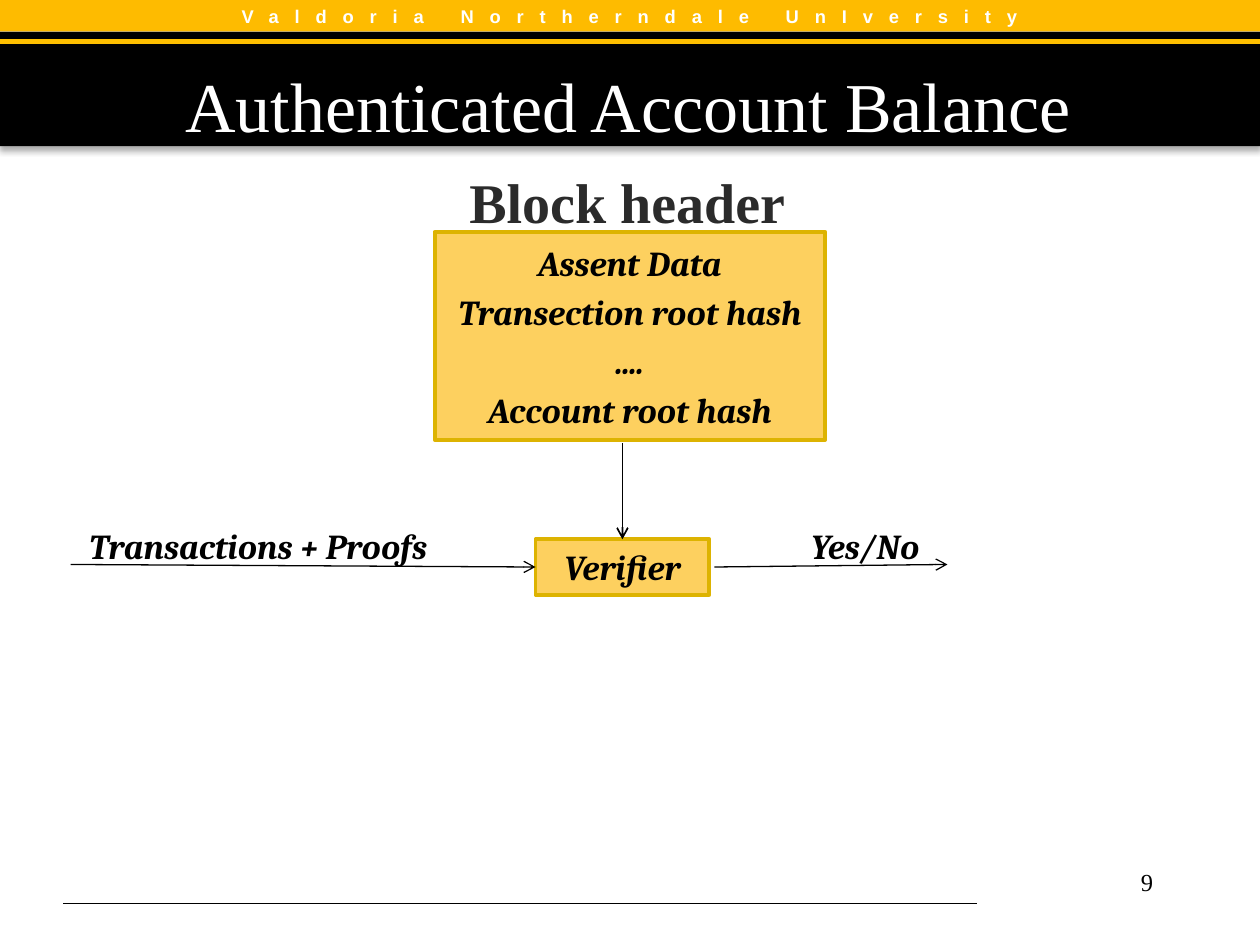
import pptx
import pptx.util
import pptx.dml.color
import pptx.enum.shapes
import pptx.enum.text
import pptx.oxml
import pptx.oxml.ns
import lxml.etree
from pptx.util import Inches, Pt

COLORS = {"black": "000000", "white": "FFFFFF", "gold": "FEBB00", "stripe": "FFC000",
          "heading": "2B2B2B", "box": "FDD05F", "border": "DDB301"}
RECTANGLE = pptx.enum.shapes.MSO_SHAPE.RECTANGLE
ALIGN = pptx.enum.text.PP_ALIGN
ANCHOR = pptx.enum.text.MSO_ANCHOR
rgb = {name: pptx.dml.color.RGBColor.from_string(value) for name, value in COLORS.items()}
qn = pptx.oxml.ns.qn

deck = pptx.Presentation()
deck.slide_width, deck.slide_height = Inches(10), Inches(7.5)
slide = deck.slides.add_slide(deck.slide_layouts[5])


def write(shape, lines, font, size, color, bold=False, italic=False,
          align=ALIGN.CENTER, anchor=ANCHOR.MIDDLE, gap=0):
    """Fill a shape with one run per line; gap is the space between lines."""
    frame = shape.text_frame
    frame.word_wrap = True
    frame.auto_size = pptx.enum.text.MSO_AUTO_SIZE.NONE
    frame.vertical_anchor = anchor
    for index, line in enumerate(lines):
        paragraph = frame.add_paragraph() if index else frame.paragraphs[0]
        paragraph.alignment = align
        paragraph.space_before = Pt(gap if index else 0)
        run = paragraph.add_run()
        run.text = line
        run.font.name, run.font.size = font, Pt(size)
        run.font.bold, run.font.italic = bold, italic
        run.font.color.rgb = rgb[color]


def draw_line(start, end, color, width, arrow=False):
    line = slide.shapes.add_connector(pptx.enum.shapes.MSO_CONNECTOR.STRAIGHT,
                                      *map(Inches, start + end))
    line.line.color.rgb = rgb[color]
    line.line.width = Pt(width)
    if arrow:
        lxml.etree.SubElement(line.line._get_or_add_ln(), qn("a:tailEnd"), type="arrow")
    lxml.etree.SubElement(line._element.spPr, qn("a:effectLst"))
    return line


# Title on black
title = slide.shapes.title
title.left, title.top, title.width, title.height = map(Inches, (0, 0.25, 9.97, 0.83))
title.left, title.width = Inches(0), Inches(10)
title.fill.solid()
title.fill.fore_color.rgb = rgb["black"]
write(title, ["Authenticated Account Balance"], "Times New Roman", 40, "white")
title.text_frame.margin_right = Inches(0.13)
title.text_frame.paragraphs[0].line_spacing = 1.5

# Header bands and diagram boxes: place, fill, border
rectangles = []
for place, fill, border in [
    ((0, 0, 10, 0.25), "gold", None),
    ((0, 1.08, 10, 0.08), "black", None),
    ((3.45, 1.84, 3.1, 1.65), "box", "border"),
    ((4.25, 4.28, 1.38, 0.44), "box", "border"),
]:
    rectangle = slide.shapes.add_shape(RECTANGLE, *map(Inches, place))
    rectangle.shadow.inherit = False
    rectangle.fill.solid()
    rectangle.fill.fore_color.rgb = rgb[fill]
    if border:
        rectangle.line.color.rgb = rgb[border]
        rectangle.line.width = Pt(2.25)
    else:
        rectangle.line.fill.background()
    rectangles.append(rectangle)
university, title_edge, block_header, verifier = rectangles

# University name, letter-spaced
write(university, ["Valdoria Northerndale UnIversity"], "Arial", 10.5, "white", bold=True)
university.text_frame.paragraphs[0].runs[0].font._element.set("spc", "910")
draw_line((0, 0.33), (10, 0.33), "stripe", 3)

# Soft shadow under the title
title_edge._element.spPr.find(qn("a:effectLst")).append(pptx.oxml.parse_xml(
    '<a:outerShdw xmlns:a="http://schemas.openxmlformats.org/drawingml/2006/main"'
    f' blurRad="{Pt(3.5)}" dist="{Pt(2.2)}" dir="5400000" rotWithShape="0">'
    f'<a:srgbClr val="{COLORS["black"]}"><a:alpha val="32000"/></a:srgbClr></a:outerShdw>'))

# Diagram texts
diagram_font = dict(font="Cambria", size=20, color="black", bold=True, italic=True)
write(block_header, ["Assent Data", "Transection root hash", "....", "Account root hash"],
      gap=4, **diagram_font)
write(verifier, ["Verifier"], **diagram_font)
for label, left, width in [("Transactions + Proofs", 0.61, 3.2), ("Yes/No", 6.34, 1.2)]:
    flow_label = slide.shapes.add_textbox(Inches(left), Inches(4.12), Inches(width), Inches(0.42))
    write(flow_label, [label], align=ALIGN.LEFT, **diagram_font)

heading = slide.shapes.add_textbox(Inches(0.77), Inches(1.28), Inches(8.42), Inches(0.64))
write(heading, ["Block header"], "Times New Roman", 32, "heading", bold=True, anchor=ANCHOR.TOP)

# Flow through the verifier
proofs_in = draw_line((0.56, 4.48), (4.25, 4.5), "black", 0.75, arrow=True)
proofs_in.end_connect(verifier, 1)
header_in = draw_line((4.94, 3.52), (4.94, 4.28), "black", 1, arrow=True)
header_in.end_connect(verifier, 0)
draw_line((5.67, 4.5), (7.52, 4.48), "black", 0.75, arrow=True)

# Footer
draw_line((0.5, 7.17), (7.75, 7.17), "black", 1)
page_number = slide.shapes.add_textbox(Inches(7.17), Inches(6.83), Inches(2.08), Inches(0.5))
write(page_number, ["9"], "Times New Roman", 14, "black", align=ALIGN.RIGHT, anchor=ANCHOR.TOP)

deck.save("out.pptx")
